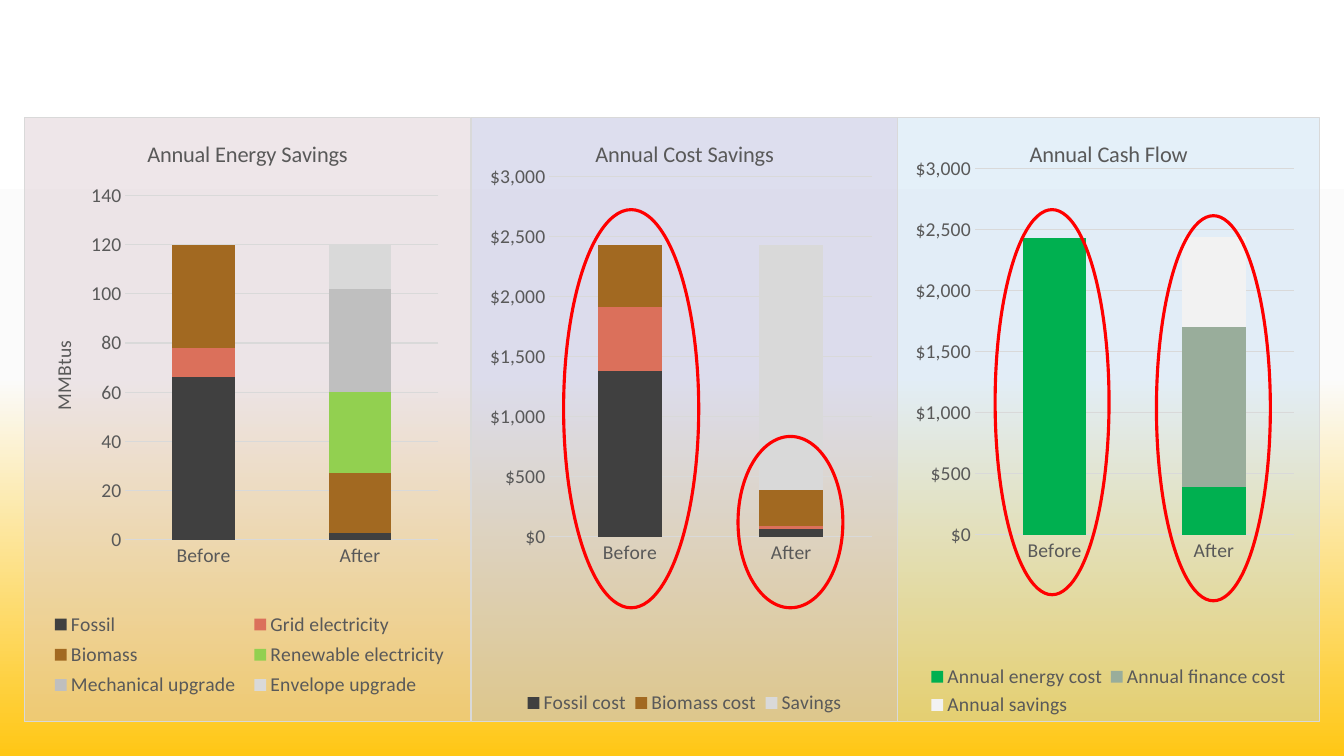
from lxml import etree
from pptx import Presentation
from pptx import util as u
from pptx.chart.data import CategoryChartData
from pptx.dml.color import RGBColor
from pptx.enum import chart as ch, shapes
from pptx.oxml import parse_xml
from pptx.oxml.ns import nsdecls, qn


def color(code):
    return RGBColor.from_string(code)


def write(frame, words, **look):
    para = frame.paragraphs[0]
    run = para.add_run()
    run.text = words
    style(run.font, **look)


def style(font, size=14, shade="595959", face="Calibri", bold=False):
    font.size = u.Pt(size)
    font.color.rgb = color(shade)
    font.name = face
    font.bold = bold


def layout(box, inner=False):
    node = etree.Element(qn("c:layout"))
    man = etree.SubElement(node, qn("c:manualLayout"))
    pairs = [("layoutTarget", "inner")] if inner else []
    pairs += [("xMode", "edge"), ("yMode", "edge")] + list(zip("xywh", box))
    for tag, val in pairs:
        etree.SubElement(man, qn("c:" + tag)).set("val", str(val))
    return node


class Deck:
    grey = "D9D9D9"
    red = "FF0000"
    top, height = 1.16, 6

    def __init__(self):
        self.prs = Presentation()
        self.prs.slide_width = u.Inches(13.33)
        self.prs.slide_height = u.Inches(7.5)
        self.slide = self.prs.slides.add_slide(self.prs.slide_layouts[6])

    def backdrop(self, stops):
        fill = self.slide.background.fill
        fill.gradient()
        fill.gradient_angle = 270
        marks = next(self.slide.element.iter(qn("a:gsLst")))
        for mark in list(marks):
            marks.remove(mark)
        for pos, code in stops:
            mark = etree.SubElement(marks, qn("a:gs"), pos=str(pos * 1000))
            etree.SubElement(mark, qn("a:srgbClr"), val=code)

    def panel(self, chart, code, alpha):
        frame = parse_xml(
            f'<c:spPr {nsdecls("c", "a")}><a:solidFill><a:srgbClr val="{code}">'
            f'<a:alpha val="{alpha * 1000}"/></a:srgbClr></a:solidFill>'
            f'<a:ln w="9525"><a:solidFill><a:srgbClr val="{self.grey}"/>'
            '</a:solidFill></a:ln></c:spPr>')
        chart.element.find(qn("c:chart")).addnext(frame)

    def axes(self, chart, peak, step, form, unit):
        cat, val = chart.category_axis, chart.value_axis
        for axis in (cat, val):
            axis.major_tick_mark = axis.minor_tick_mark = ch.XL_TICK_MARK.NONE
            style(axis.tick_labels.font)
        cat.format.line.color.rgb = color(self.grey)
        cat.format.line.width = u.Pt(0.75)
        val.format.line.fill.background()
        grid = val.major_gridlines.format.line
        grid.color.rgb = color(self.grey)
        grid.width = u.Pt(0.75)
        val.minimum_scale, val.maximum_scale, val.major_unit = 0, peak, step
        val.tick_labels.number_format = form
        val.tick_labels.number_format_is_linked = False
        if unit:
            write(val.axis_title.text_frame, unit)

    def legend(self, chart, box, hide):
        chart.has_legend = True
        key = chart.legend
        key.position = ch.XL_LEGEND_POSITION.BOTTOM
        key.include_in_layout = False
        style(key.font)
        node = chart.element.find(".//" + qn("c:legend"))
        for old in node.findall(qn("c:layout")):
            node.remove(old)
        spot = node.find(qn("c:legendPos"))
        spot.addnext(layout(box))
        if hide is not None:
            spot.addnext(parse_xml(
                f'<c:legendEntry {nsdecls("c")}><c:idx val="{hide}"/>'
                '<c:delete val="1"/></c:legendEntry>'))

    def chart(self, title, left, width, tint, plot, key, rows,
              peak=3000, step=500, form='"$"#,##0', unit=None, hide=None):
        data = CategoryChartData()
        data.categories = ["Before", "After"]
        for name, vals, _ in rows:
            data.add_series(name, vals)
        chart = self.slide.shapes.add_chart(
            ch.XL_CHART_TYPE.COLUMN_STACKED, u.Inches(left),
            u.Inches(self.top), u.Inches(width), u.Inches(self.height),
            data).chart
        style(chart.font, shade="000000")
        chart.has_title = True
        write(chart.chart_title.text_frame, title, size=16)
        chart.chart_title.include_in_layout = False
        bars = chart.plots[0]
        bars.gap_width, bars.overlap = 150, 100
        bars.vary_by_categories = False
        for bar, row in zip(bars.series, rows):
            bar.format.fill.solid()
            bar.format.fill.fore_color.rgb = color(row[2])
        self.axes(chart, peak, step, form, unit)
        self.legend(chart, key, hide)
        area = chart.element.find(".//" + qn("c:plotArea"))
        for old in area.findall(qn("c:layout")):
            area.remove(old)
        area.insert(0, layout(plot, inner=True))
        self.panel(chart, *tint)

    def ring(self, *box):
        oval = self.slide.shapes.add_shape(
            shapes.MSO_SHAPE.OVAL, *map(u.Inches, box))
        oval.shadow.inherit = False
        oval.fill.background()
        oval.line.color.rgb = color(self.red)
        oval.line.width = u.Pt(2.25)


def main():
    deck = Deck()
    deck.backdrop([(0, "FFFFFF"), (50, "FBFBFB"), (100, "FFC715")])
    coal, coral, wood = "404040", "DB705B", "A26921"
    deck.chart(
        "Annual Energy Savings", 0.24, 4.43, ("DAC8CF", 44),
        (0.226, 0.129, 0.702, 0.571), (0.04, 0.81, 0.93, 0.16),
        [("Fossil", (66, 3), coal),
         ("Grid electricity", (12, 0), coral),
         ("Biomass", (42, 24), wood),
         ("Renewable electricity", (None, 33), "92D050"),
         ("Mechanical upgrade", (None, 42), "BFBFBF"),
         ("Envelope upgrade", (None, 18), deck.grey)],
        peak=140, step=20, form="General", unit="MMBtus")
    deck.chart(
        "Annual Cost Savings", 4.67, 4.24, ("C2C3E0", 54),
        (0.183, 0.098, 0.756, 0.597), (0.11, 0.95, 0.78, 0.05),
        [("Fossil cost", (1380, 70), coal),
         ("Series 2", (530, 20), coral),
         ("Biomass cost", (520, 300), wood),
         ("Savings", (None, 2040), deck.grey)],
        hide=1)
    deck.chart(
        "Annual Cash Flow", 8.9, 4.19, ("B6D6F0", 36),
        (0.183, 0.085, 0.756, 0.606), (0.06, 0.9, 0.88, 0.1),
        [("Annual energy cost", (2430, 390), "00B050"),
         ("Annual finance cost", (None, 1310), "99AD9B"),
         ("Annual savings", (None, 740), "F2F2F2")])
    deck.ring(5.59, 2.08, 1.34, 3.95)
    deck.ring(7.32, 4.33, 1.04, 1.7)
    deck.ring(9.87, 2.08, 1.13, 3.82)
    deck.ring(11.47, 2.14, 1.13, 3.82)
    deck.prs.save("out.pptx")


if __name__ == "__main__":
    main()
